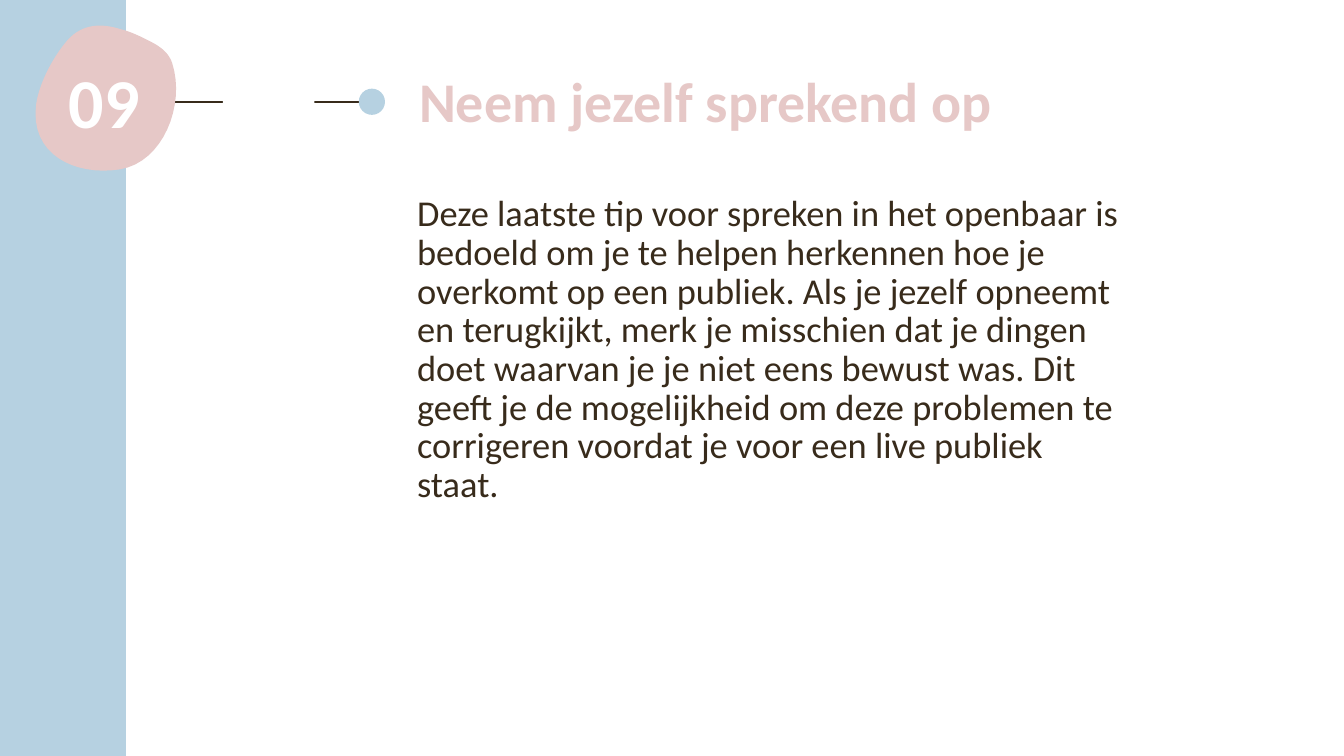
from pptx import Presentation
from pptx.dml.color import RGBColor
from pptx.enum.shapes import MSO_CONNECTOR as Connector, MSO_SHAPE as Shape
from pptx.enum.text import MSO_ANCHOR as Anchor, PP_ALIGN as Align
from pptx.oxml.ns import qn
from pptx.util import Pt
from lxml import etree

BLUE = RGBColor(0xB6, 0xD1, 0xE1)
PINK = RGBColor(0xE6, 0xC8, 0xC7)
BROWN = RGBColor(0x38, 0x2B, 0x1B)
WHITE = RGBColor(0xFF, 0xFF, 0xFF)
FONT = "Calibri"
CURVE_STEPS = 16

# Badge outline in points from the badge's top left corner:
# each curve has two control points and an end point.
BADGE_START = (61.2, 2.9)
BADGE_CURVES = [
    ((47.5, -1.4), (33.8, -1.4), (23, 10.8)),
    ((13, 22.3), (2.9, 41), (0.7, 56.2)),
    ((-4.3, 92.2), (28.1, 108), (60.5, 103)),
    ((91.4, 97.9), (107.3, 56.9), (97.9, 27.4)),
    ((95, 18), (86.4, 13.7), (79.2, 10.1)),
    ((73.4, 7.2), (67, 4.3), BADGE_START),
]

BODY = (
    "Deze laatste tip voor spreken in het openbaar is bedoeld om je te helpen "
    "herkennen hoe je overkomt op een publiek. Als je jezelf opneemt en "
    "terugkijkt, merk je misschien dat je dingen doet waarvan je je niet eens "
    "bewust was. Dit geeft je de mogelijkheid om deze problemen te corrigeren "
    "voordat je voor een live publiek staat."
)


def paint(shape, color):
    shape.shadow.inherit = False
    shape.fill.solid()
    shape.fill.fore_color.rgb = color
    shape.line.fill.background()


def add_block(page, kind, left, top, width, height, color):
    block = page.shapes.add_shape(kind, Pt(left), Pt(top), Pt(width), Pt(height))
    paint(block, color)


def add_text(page, left, top, width, height, text, size, color, spacing,
             bold=False, align=Align.LEFT):
    box = page.shapes.add_textbox(Pt(left), Pt(top), Pt(width), Pt(height))
    frame = box.text_frame
    frame.word_wrap = True
    frame.vertical_anchor = Anchor.TOP
    para = frame.paragraphs[0]
    para.alignment = align
    para.line_spacing = spacing
    span = para.add_run()
    span.text = text
    span.font.name = FONT
    span.font.size = Pt(size)
    span.font.bold = bold
    span.font.color.rgb = color


def curve_points(start, first, second, end):
    """Return points along a cubic curve, without its start."""
    points = []
    for step in range(1, CURVE_STEPS + 1):
        t = step / CURVE_STEPS
        u = 1 - t
        points.append(tuple(
            u**3 * a + 3 * u**2 * t * b + 3 * u * t**2 * c + t**3 * d
            for a, b, c, d in zip(start, first, second, end)
        ))
    return points


def add_pointer(page, left, middle, width, dot):
    """Draw a broken line that ends in a dot on the right."""
    line = page.shapes.add_connector(
        Connector.STRAIGHT, Pt(left + width - dot / 2), Pt(middle),
        Pt(left), Pt(middle))
    line.line.color.rgb = BROWN
    line.line.width = Pt(1.5)
    etree.SubElement(line._element.spPr, qn("a:effectLst"))
    add_block(page, Shape.OVAL, left + width - dot, middle - dot / 2,
              dot, dot, BLUE)
    add_block(page, Shape.RECTANGLE, left + 50.4, middle - 28.8,
              65.5, 328.3, WHITE)


def add_badge(page, left, top, number):
    outline = []
    start = BADGE_START
    for first, second, end in BADGE_CURVES:
        outline += curve_points(start, first, second, end)
        start = end
    units = 100  # drawing units per point
    scaled = [(x * units, y * units) for x, y in outline]
    builder = page.shapes.build_freeform(*scaled[-1], scale=Pt(1) / units)
    builder.add_line_segments(scaled[:-1], close=True)
    paint(builder.convert_to_shape(Pt(left), Pt(top)), PINK)
    add_text(page, left - 11.5, top + 27.4, 121.7, 67.7, number, 50, WHITE,
             0.9, bold=True, align=Align.CENTER)


def add_tip_slide(deck, number, title, body):
    page = deck.slides.add_slide(deck.slide_layouts[6])
    add_pointer(page, 108.7, 72.7, 166.3, 18.7)
    add_block(page, Shape.RECTANGLE, 0, 0, 90, 540, BLUE)
    add_text(page, 290.9, 136.1, 523.4, 164.2, body, 26, BROWN, Pt(27.6))
    add_text(page, 292.3, 51.8, 514.8, 127.4, title, 40, PINK, Pt(40.2),
             bold=True)
    add_badge(page, 25.2, 18, number)


def main():
    deck = Presentation()
    deck.slide_width, deck.slide_height = Pt(960), Pt(540)
    add_tip_slide(deck, "09", "Neem jezelf sprekend op", BODY)
    deck.save("out.pptx")


if __name__ == "__main__":
    main()
